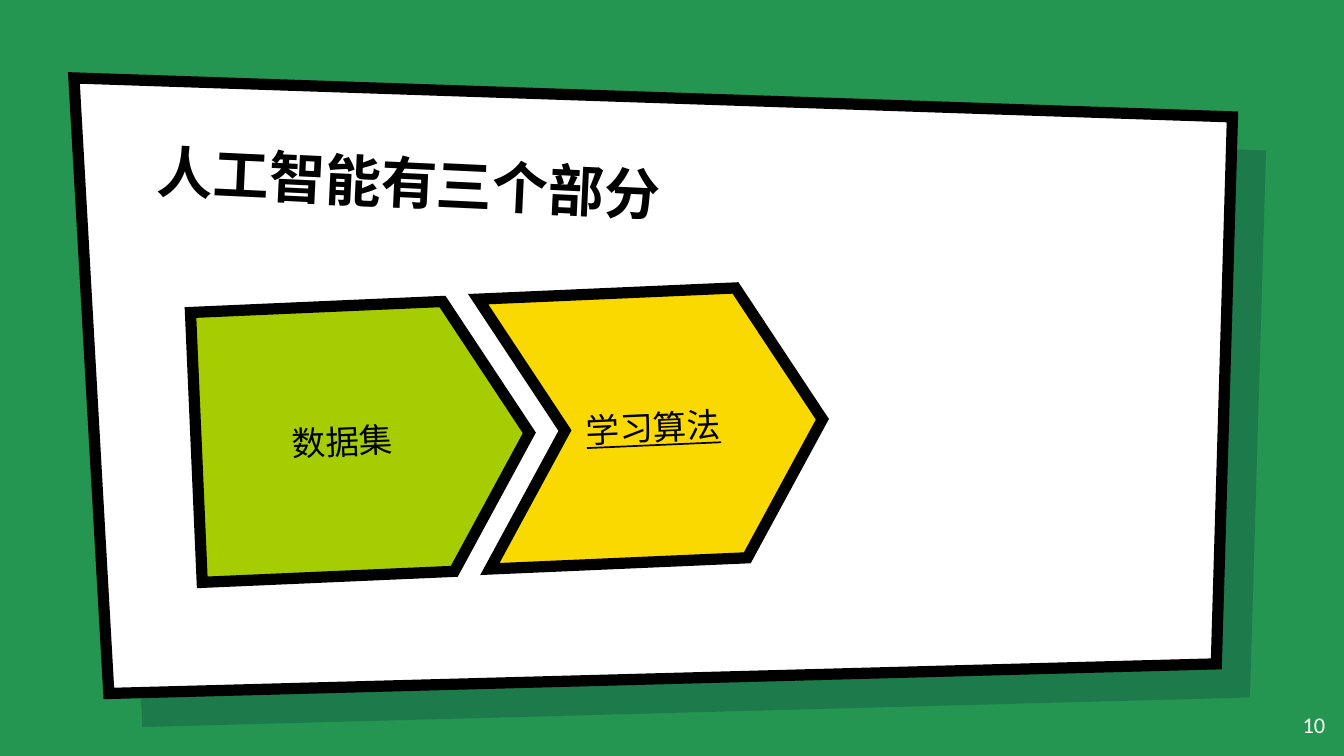
from dataclasses import dataclass

from lxml import etree
from pptx import Presentation, util as u
from pptx.dml.color import RGBColor
from pptx.enum import shapes as sh, text as tx
from pptx.oxml import ns


@dataclass(frozen=True)
class Theme:
    """Colours, type sizes and line width of the slide."""
    back: str = "249651"
    shade: str = "001936"
    paper: str = "FFFFFF"
    ink: str = "000000"
    lime: str = "A6CD02"
    gold: str = "FAD900"
    font: str = "Calibri"
    head: int = 30
    body: int = 18
    note: int = 12
    edge: int = 6
    alpha: int = 22


T = Theme()


def paint(fill, hue):
    """Fill with one solid colour."""
    fill.solid()
    fill.fore_color.rgb = RGBColor.from_string(hue)


def outline(shape):
    """Give a shape the heavy line with sharp corners."""
    paint(shape.line.fill, T.ink)
    shape.line.width = u.Pt(T.edge)
    join = etree.SubElement(shape.line._ln, ns.qn("a:miter"))
    join.set("lim", "800000")


def write(shape, words, size, hue, align, anchor, bold=False, under=False):
    """Set the text of a shape as one formatted run."""
    frame = shape.text_frame
    frame.word_wrap = True
    frame.auto_size = tx.MSO_AUTO_SIZE.NONE
    frame.vertical_anchor = anchor
    for side in ("left", "right", "top", "bottom"):
        setattr(frame, f"margin_{side}", u.Inches(0.1))
    para = frame.paragraphs[0]
    para.alignment = align
    run = para.add_run()
    run.text = words
    font = run.font
    font.name, font.size = T.font, u.Pt(size)
    font.bold, font.underline = bold, under
    font.color.rgb = RGBColor.from_string(hue)


def panel(slide, box, hue):
    """Draw the slanted four-sided panel in a box."""
    left, top, wide, high = box
    ends = [(0, 0), (wide, 0.29), (wide - 0.12, high - 0.22), (0.26, high)]
    dots = [(u.Inches(left + x), u.Inches(top + y)) for x, y in ends]
    form = slide.shapes.build_freeform(*dots[0], scale=1.0)
    form.add_line_segments(dots[1:], close=True)
    shape = form.convert_to_shape()
    shape.shadow.inherit = False
    paint(shape.fill, hue)
    return shape


def board(slide, box, shift):
    """Draw the white board over its offset see-through shade."""
    left, top, wide, high = box
    shade = panel(slide, (left + shift, top + shift, wide, high), T.shade)
    shade.line.fill.background()
    tint = shade.fill._xPr.find(f".//{ns.qn('a:srgbClr')}")
    etree.SubElement(tint, ns.qn("a:alpha")).set("val", str(T.alpha * 1000))
    outline(panel(slide, box, T.paper))


def title(slide, box, words):
    """Place the tilted title in front of the board."""
    shape = slide.shapes.title
    slide.shapes._spTree.append(shape._element)
    shape.left, shape.top, shape.width, shape.height = map(u.Inches, box)
    shape.rotation = 2.7
    write(shape, words, T.head, T.ink, tx.PP_ALIGN.LEFT,
          tx.MSO_ANCHOR.BOTTOM, bold=True)


def step(slide, box, kind, hue, words, under=False):
    """Draw one tilted arrow block with its label."""
    shape = slide.shapes.add_shape(kind, *map(u.Inches, box))
    shape.shadow.inherit = False
    shape.adjustments[0] = 0.3
    shape.rotation = 357.5
    paint(shape.fill, hue)
    outline(shape)
    write(shape, words, T.body, T.ink, tx.PP_ALIGN.CENTER,
          tx.MSO_ANCHOR.MIDDLE, under=under)


def steps(slide, box):
    """Place the two arrow blocks, the second a little higher."""
    left, top, wide, high = box
    kind = sh.MSO_SHAPE
    step(slide, (left, top + 0.1, 2.48, high - 0.1), kind.PENTAGON,
         T.lime, "数据集")
    step(slide, (left + wide - 2.52, top, 2.52, high - 0.1), kind.CHEVRON,
         T.gold, "学习算法", under=True)


def number(slide, box, words):
    """Place the page number."""
    shape = slide.shapes.add_textbox(*map(u.Inches, box))
    write(shape, words, T.note, T.paper, tx.PP_ALIGN.RIGHT, tx.MSO_ANCHOR.TOP)


def main():
    """Build and save the slide."""
    deck = Presentation()
    deck.slide_width = u.Inches(10)
    deck.slide_height = u.Inches(10 * 9 / 16)
    slide = deck.slides.add_slide(deck.slide_layouts[5])
    paint(slide.background.fill, T.back)
    board(slide, (0.55, 0.58, 8.62, 4.58), 0.25)
    title(slide, (1.07, 0.96, 7.69, 0.83), "人工智能有三个部分")
    steps(slide, (1.46, 2.17, 4.66, 2.11))
    number(slide, (9.36, 5.19, 0.6, 0.43), "10")
    deck.save("out.pptx")


if __name__ == "__main__":
    main()
